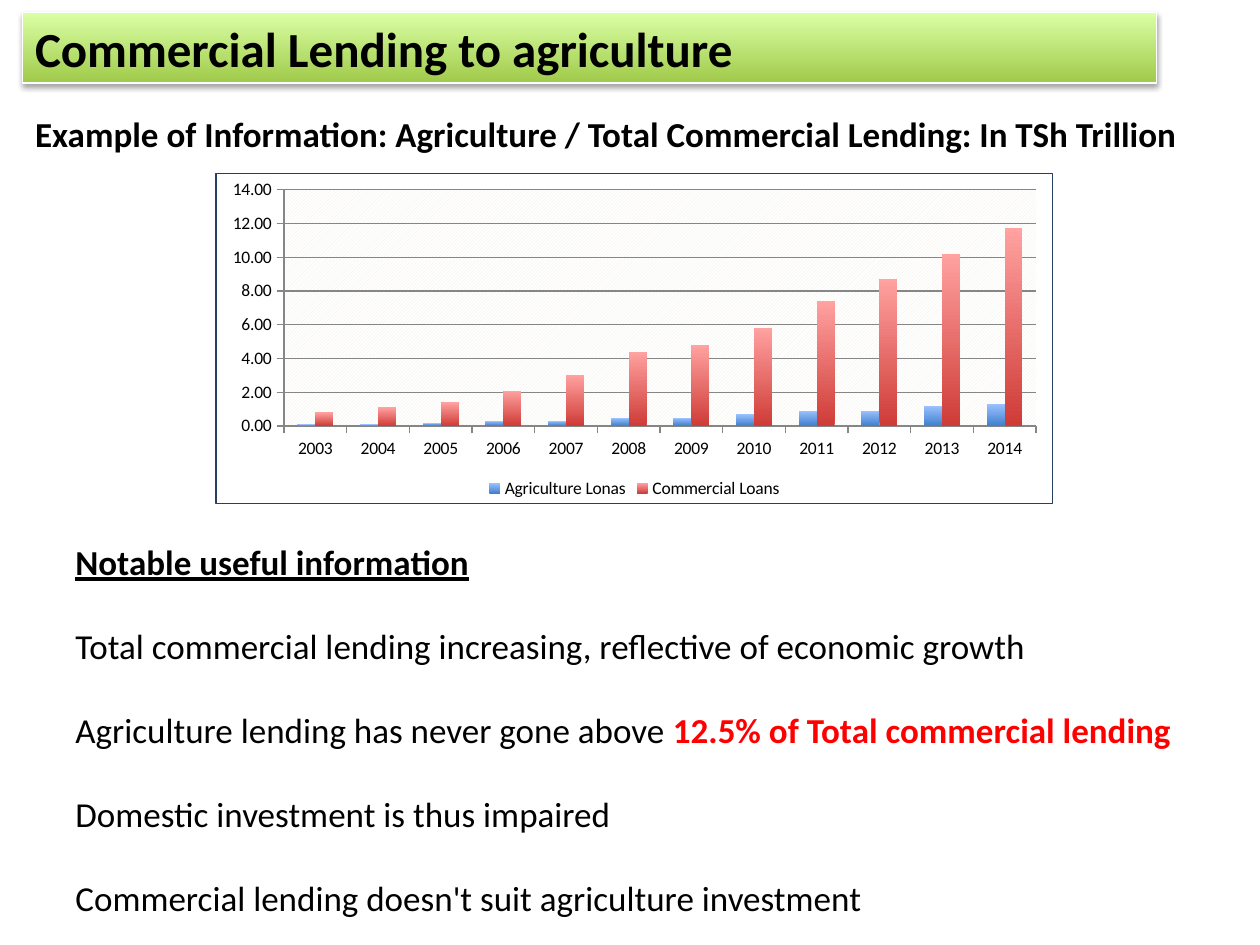
from lxml import etree
from pptx import Presentation
from pptx.chart.data import CategoryChartData
from pptx.dml.color import RGBColor
from pptx.enum.chart import XL_CHART_TYPE, XL_LEGEND_POSITION, XL_TICK_MARK
from pptx.enum.shapes import MSO_SHAPE
from pptx.enum.text import MSO_ANCHOR, PP_ALIGN
from pptx.util import Inches, Pt

COLUMNS = XL_CHART_TYPE.COLUMN_CLUSTERED
BOTTOM = XL_LEGEND_POSITION.BOTTOM
OUTSIDE = XL_TICK_MARK.OUTSIDE
RECTANGLE = MSO_SHAPE.RECTANGLE
MIDDLE, TOP = MSO_ANCHOR.MIDDLE, MSO_ANCHOR.TOP
LEFT = PP_ALIGN.LEFT

FONT = "Calibri"
BLACK, WHITE, RED, GRID, NAVY = "000000", "FFFFFF", "FF0000", "868686", "254061"
DRAWING = 'xmlns:a="http://schemas.openxmlformats.org/drawingml/2006/main"'
CHART = 'xmlns:c="http://schemas.openxmlformats.org/drawingml/2006/chart"'

YEARS = [str(year) for year in range(2003, 2015)]
# name, values, colour at the foot and at the top of each column
LOANS = [
    ("Agriculture Lonas",
     [0.1, 0.1, 0.2, 0.3, 0.3, 0.5, 0.5, 0.7, 0.9, 0.9, 1.2, 1.3],
     "3F80CD", "9BC1FF"),
    ("Commercial Loans",
     [0.8, 1.1, 1.4, 2.1, 3, 4.4, 4.8, 5.8, 7.4, 8.7, 10.2, 11.7],
     "CF3B37", "FFA2A0"),
]
# each paragraph is a list of (text, format)
FINDINGS = [
    [("Notable useful information", {"bold": True, "underline": True})],
    [("Total commercial lending increasing, reflective of economic growth", {})],
    [("Agriculture lending has never gone above ", {}),
     ("12.5% of Total commercial lending", {"bold": True, "color": RED})],
    [("Domestic investment is thus impaired", {})],
    [("Commercial lending doesn't suit agriculture investment", {})],
]


def rgb(hex_color):
    return RGBColor.from_string(hex_color)


def inches(*lengths):
    return [Inches(length) for length in lengths]


def fill_upward(fill, foot, top):
    fill.gradient()
    fill.gradient_angle = 90
    for stop, color in zip(fill.gradient_stops, (foot, top)):
        stop.color.rgb = rgb(color)


def style_line(line, color, width=0.75):
    line.color.rgb = rgb(color)
    line.width = Pt(width)


def add_span(para, text, size=20, bold=False, underline=False, color=BLACK):
    span = para.add_run()
    span.text = text
    font = span.font
    font.name, font.size, font.bold = FONT, Pt(size), bold
    font.underline = underline
    font.color.rgb = rgb(color)


def write(box, paragraphs, anchor=TOP, gap=0):
    frame = box.text_frame
    frame.word_wrap = True
    frame.vertical_anchor = anchor
    for index, spans in enumerate(paragraphs):
        para = frame.add_paragraph() if index else frame.paragraphs[0]
        para.alignment = LEFT
        if index:
            para.space_before = Pt(gap)
        for text, style in spans:
            add_span(para, text, **style)


def add_text(page, place, paragraphs, **layout):
    write(page.shapes.add_textbox(*inches(*place)), paragraphs, **layout)


def add_banner(page, place, text):
    banner = page.shapes.add_shape(RECTANGLE, *inches(*place))
    fill_upward(banner.fill, "A0CA4A", "DAFFA5")
    style_line(banner.line, WHITE)
    banner._element.spPr.append(etree.fromstring(
        f'<a:effectLst {DRAWING}><a:outerShdw blurRad="{Pt(3.1)}" '
        f'dist="{Pt(1.8)}" dir="5400000" rotWithShape="0">'
        f'<a:srgbClr val="{BLACK}"><a:alpha val="35000"/></a:srgbClr>'
        '</a:outerShdw></a:effectLst>'))
    write(banner, [[(text, {"size": 28, "bold": True})]], anchor=MIDDLE)


def chart_area(content):
    return etree.fromstring(f'<c:spPr {CHART} {DRAWING}>{content}</c:spPr>')


def solid(color):
    return f'<a:solidFill><a:srgbClr val="{color}"/></a:solidFill>'


def style_frame(chart):
    # hatched plot area, white chart area with a thin border
    space = chart._chartSpace
    space.chart.plotArea.append(chart_area(
        '<a:pattFill prst="ltUpDiag"><a:fgClr><a:srgbClr val="EEECE1"/></a:fgClr>'
        f'<a:bgClr><a:srgbClr val="{WHITE}"/></a:bgClr></a:pattFill>'))
    space.chart.addnext(chart_area(
        f'{solid(WHITE)}<a:ln w="{Pt(0.75)}">{solid(NAVY)}</a:ln>'))


def add_loan_chart(page, place):
    data = CategoryChartData(number_format="0.00")
    data.categories = YEARS
    for name, values, *_ in LOANS:
        data.add_series(name, values)
    chart = page.shapes.add_chart(COLUMNS, *inches(*place), data).chart
    chart.has_title = False
    chart.font.name, chart.font.size = FONT, Pt(10)
    chart.font.color.rgb = rgb(BLACK)

    chart.has_legend = True
    chart.legend.position = BOTTOM
    chart.legend.include_in_layout = False

    for axis in (chart.category_axis, chart.value_axis):
        axis.major_tick_mark = OUTSIDE
        style_line(axis.format.line, GRID)
    values_axis = chart.value_axis
    values_axis.minimum_scale, values_axis.maximum_scale = 0, 14
    values_axis.major_unit = 2
    values_axis.tick_labels.number_format = "0.00"
    values_axis.tick_labels.number_format_is_linked = False
    values_axis.has_major_gridlines = True
    style_line(values_axis.major_gridlines.format.line, GRID)

    plot = chart.plots[0]
    plot.gap_width, plot.overlap = 150, 0
    plot.vary_by_categories = False
    for series, (*_, foot, top) in zip(plot.series, LOANS):
        fill_upward(series.format.fill, foot, top)
    style_frame(chart)


def main():
    deck = Presentation()
    deck.slide_width, deck.slide_height = inches(10, 7.5)
    page = deck.slides.add_slide(deck.slide_layouts[6])

    # Heading
    add_banner(page, (0.18, 0.1, 9, 0.56), "Commercial Lending to agriculture")
    # Chart and its caption
    add_loan_chart(page, (1.71, 1.37, 6.65, 2.63))
    caption = ("Example of Information: Agriculture / Total Commercial Lending: "
               "In TSh Trillion")
    add_text(page, (0.18, 0.84, 9.48, 0.44), [[(caption, {"bold": True})]])
    # Findings, one blank line's height apart
    add_text(page, (0.5, 4.24, 9.16, 3.13), FINDINGS, gap=24)

    deck.save("out.pptx")


if __name__ == "__main__":
    main()
